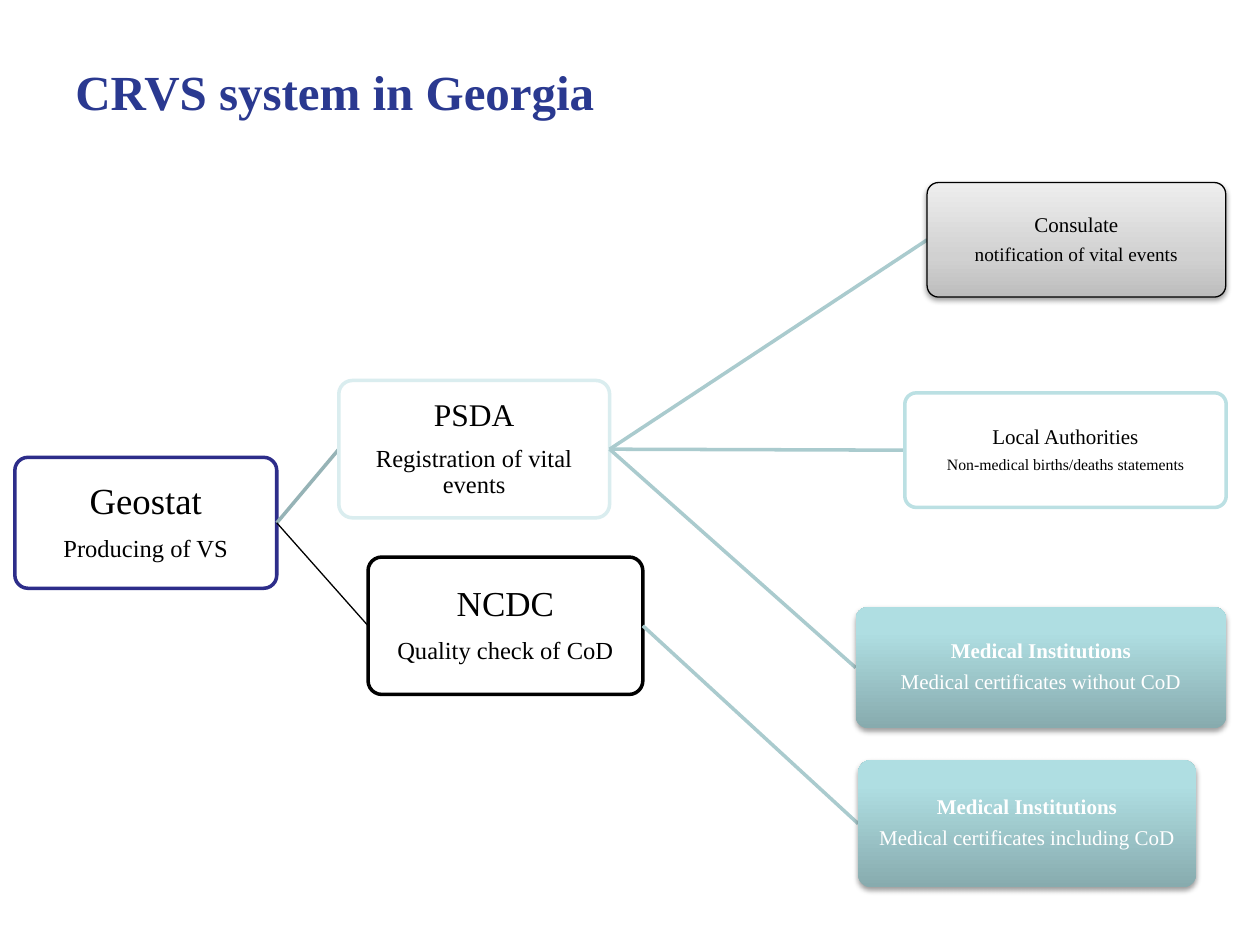
"""Build the slide showing the CRVS system in Georgia as a tree of institutions."""
from lxml import etree
from pptx import Presentation
from pptx import util as u
from pptx.dml import color
from pptx.enum import shapes, text
from pptx.oxml import ns


def hue(code):
    return color.RGBColor.from_string(code)


def write(para, words, size=12, ink="000000", bold=False, align=text.PP_ALIGN.CENTER, after=0, spacing=0.9):
    para.alignment = align
    para.line_spacing = spacing
    para.space_after = u.Pt(after)
    span = para.add_run()
    span.text = words
    span.font.name = "Times New Roman"
    span.font.size = u.Pt(size)
    span.font.bold = bold
    span.font.color.rgb = hue(ink)


deck = Presentation()
deck.slide_width, deck.slide_height = u.Cm(25.4), u.Cm(19.05)
page = deck.slides.add_slide(deck.slide_layouts[6])

title = page.shapes.add_textbox(u.Cm(1.27), u.Cm(0.76), u.Cm(20.68), u.Cm(2.16))
title.text_frame.word_wrap = True
title.text_frame.vertical_anchor = text.MSO_ANCHOR.MIDDLE
write(title.text_frame.paragraphs[0], "CRVS system in Georgia", size=28, ink="2A3990",
      bold=True, align=text.PP_ALIGN.LEFT, spacing=1)

teal = [(0, "87ABAE"), (80, "AFDEE2"), (100, "AFE0E4")]
grey = [(0, "BDBDBD"), (35, "D1D1D1"), (100, "EEEEEE")]
pale = ("AACBCE", 2)
nodes = [
    ("geostat", None, None, (0.3, 9.22, 5.28, 2.64), None, ("2D2D8A", 2), "000000",
     [("Geostat", 21), ("Producing of VS", 14)]),
    ("psda", "geostat", ("96B3B6", 2), (6.83, 7.67, 5.46, 2.77), None, ("DAEDEF", 2), "000000",
     [("PSDA", 18), ("Registration of vital events", 14)]),
    ("without", "psda", pale, (17.25, 12.24, 7.47, 2.44), teal, None, "FFFFFF",
     [("Medical Institutions", 12), ("Medical certificates without CoD", 12)]),
    ("local", "psda", pale, (18.24, 7.92, 6.48, 2.31), None, ("BBE0E3", 2), "000000",
     [("Local Authorities", 12), ("Non-medical births/deaths statements", 9)]),
    ("consulate", "psda", pale, (18.69, 3.68, 6.02, 2.31), grey, ("000000", 0.75), "000000",
     [("Consulate", 12), ("notification of vital events", 11)]),
    ("ncdc", "geostat", ("000000", 0.75), (7.42, 11.23, 5.54, 2.77), None, ("000000", 2), "000000",
     [("NCDC", 20), ("Quality check of CoD", 14)]),
    ("including", "ncdc", pale, (17.3, 15.32, 6.81, 2.57), teal, None, "FFFFFF",
     [("Medical Institutions", 12), ("Medical certificates including CoD", 12)]),
]

boxes = {}
for name, parent, link, place, stops, border, ink, lines in nodes:
    left, top, width, height = [u.Cm(value) for value in place]
    if parent:
        source = boxes[parent]
        branch = page.shapes.add_connector(
            shapes.MSO_CONNECTOR.STRAIGHT, source.left + source.width,
            source.top + source.height // 2, left, top + height // 2)
        branch.line.color.rgb = hue(link[0])
        branch.line.width = u.Pt(link[1])
        etree.SubElement(branch._element.spPr, ns.qn("a:effectLst"))

    box = boxes[name] = page.shapes.add_shape(
        shapes.MSO_SHAPE.ROUNDED_RECTANGLE, left, top, width, height)
    box.adjustments[0] = 0.1
    box.shadow.inherit = False
    if border:
        box.line.color.rgb = hue(border[0])
        box.line.width = u.Pt(border[1])
    else:
        box.line.fill.background()

    if stops:
        gradient = etree.Element(ns.qn("a:gradFill"), rotWithShape="1")
        ramp = etree.SubElement(gradient, ns.qn("a:gsLst"))
        for percent, code in stops:
            stop = etree.SubElement(ramp, ns.qn("a:gs"), pos=str(percent * 1000))
            etree.SubElement(stop, ns.qn("a:srgbClr"), val=code)
        etree.SubElement(gradient, ns.qn("a:lin"), ang="16200000", scaled="0")
        properties = box._element.spPr
        properties.find(ns.qn("a:prstGeom")).addnext(gradient)
        shadow = etree.SubElement(properties.find(ns.qn("a:effectLst")), ns.qn("a:outerShdw"),
                                  blurRad="40000", dist="20000", dir="5400000", rotWithShape="0")
        shade = etree.SubElement(shadow, ns.qn("a:srgbClr"), val="000000")
        etree.SubElement(shade, ns.qn("a:alpha"), val="38000")
    else:
        box.fill.solid()
        box.fill.fore_color.rgb = hue("FFFFFF")

    frame = box.text_frame
    frame.word_wrap = True
    frame.vertical_anchor = text.MSO_ANCHOR.MIDDLE
    frame.margin_left = frame.margin_right = frame.margin_top = frame.margin_bottom = u.Cm(0.1)
    for index, (words, size) in enumerate(lines):
        para = frame.add_paragraph() if index else frame.paragraphs[0]
        write(para, words, size=size, ink=ink, bold=ink == "FFFFFF" and index == 0, after=round(size * 0.4, 1))

deck.save("out.pptx")
